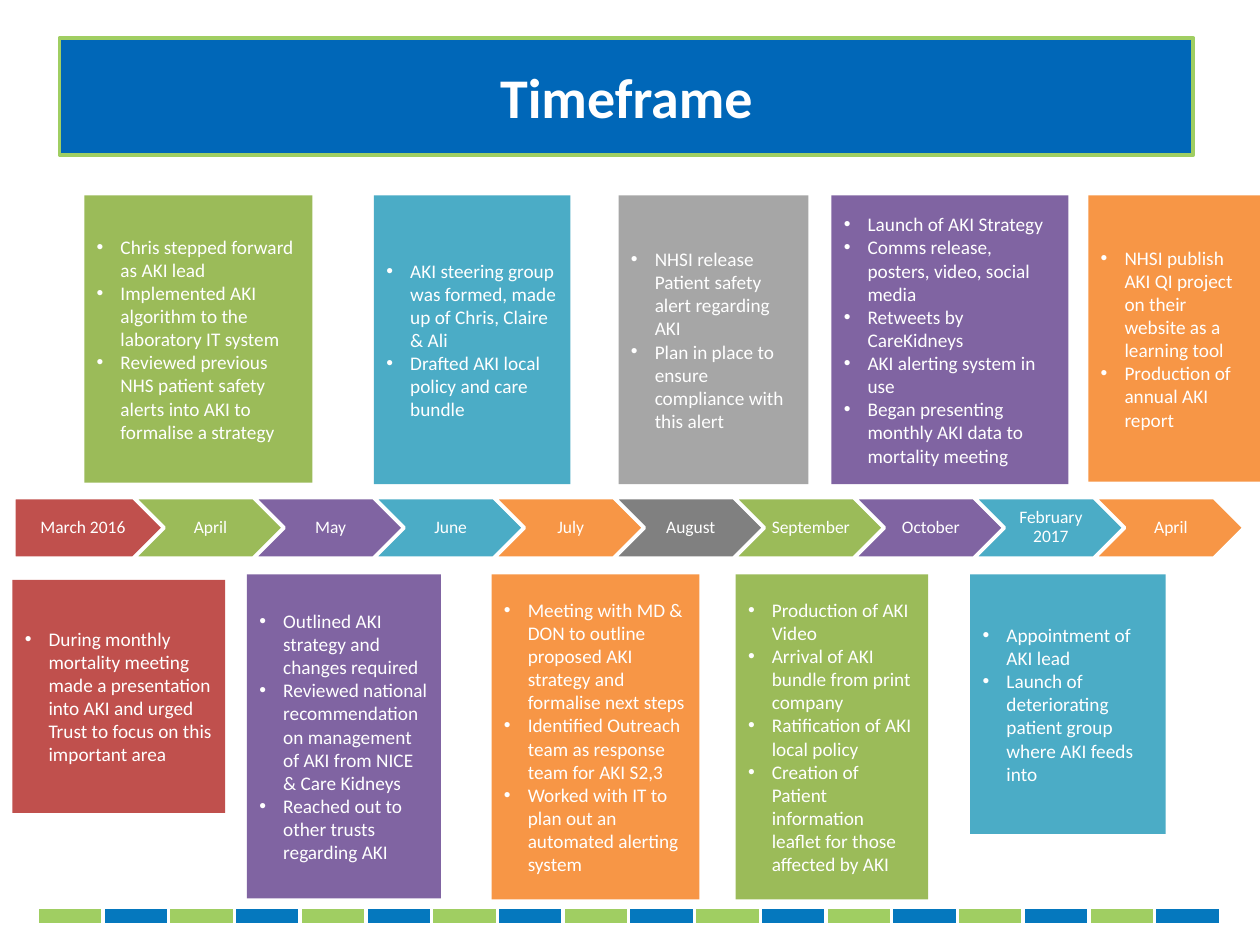
"""Build the Timeframe slide: monthly arrows with event cards above and below."""
from lxml import etree
from pptx import Presentation
from pptx import util as u
from pptx.dml.color import RGBColor
from pptx.enum import shapes, text
from pptx.oxml import ns

THEME = {
    "font": "Calibri", "title_size": 32, "month_size": 10, "card_size": 11,
    "white": "FFFFFF", "banner": "0067B8", "lime": "A0CE62", "stripe": "0578BE",
    "red": "C0504D", "green": "9BBB59", "purple": "8064A2", "teal": "4BACC6",
    "orange": "F79646", "grey": "808080", "silver": "A6A6A6",
}

TITLE = "Timeframe"
MONTHS = [
    ("March 2016", "red"), ("April", "green"), ("May", "purple"), ("June", "teal"),
    ("July", "orange"), ("August", "grey"), ("September", "green"),
    ("October", "purple"), ("February 2017", "teal"), ("April", "orange"),
]
EVENTS_ABOVE = [
    ("green", (1.7, 3.94, 4.6, 5.79), [
        "Chris stepped forward as AKI lead",
        "Implemented AKI algorithm to the laboratory IT system",
        "Reviewed previous NHS patient safety alerts into AKI to formalise a strategy"]),
    ("teal", (7.54, 3.94, 3.96, 5.82), [
        "AKI steering group was formed, made up of Chris, Claire & Ali",
        "Drafted AKI local policy and care bundle"]),
    ("silver", (12.47, 3.94, 3.83, 5.82), [
        "NHSI release Patient safety alert regarding AKI",
        "Plan in place to ensure compliance with this alert"]),
    ("purple", (16.76, 3.94, 4.78, 5.82), [
        "Launch of AKI Strategy",
        "Comms release, posters, video, social media",
        "Retweets by CareKidneys",
        "AKI alerting system in use",
        "Began presenting monthly AKI data to mortality meeting"]),
    ("orange", (21.94, 3.94, 3.46, 5.77), [
        "NHSI publish AKI QI project on their website as a learning tool",
        "Production of annual AKI report"]),
]
EVENTS_BELOW = [
    ("red", (0.25, 11.69, 4.29, 4.7), [
        "During monthly mortality meeting made a presentation into AKI "
        "and urged Trust to focus on this important area"]),
    ("purple", (4.98, 11.58, 3.91, 6.53), [
        "Outlined AKI strategy and changes required",
        "Reviewed national recommendation on management of AKI from NICE & Care Kidneys",
        "Reached out to other trusts regarding AKI"]),
    ("orange", (9.91, 11.58, 4.19, 6.55), [
        "Meeting with MD & DON to outline proposed AKI strategy and formalise next steps",
        "Identified Outreach team as response team for AKI S2,3",
        "Worked with IT to plan out an automated alerting system"]),
    ("green", (14.83, 11.58, 3.88, 6.55), [
        "Production of AKI Video",
        "Arrival of AKI bundle from print company",
        "Ratification of AKI local policy",
        "Creation of Patient information leaflet for those affected by AKI"]),
    ("teal", (19.56, 11.58, 3.94, 5.23), [
        "Appointment of AKI lead",
        "Launch of deteriorating patient group where AKI feeds into"]),
]

FRAME = {"word_wrap": True, "vertical_anchor": text.MSO_ANCHOR.MIDDLE}
MONTH_FRAME = {"margin_left": u.Cm(0.1), "margin_right": u.Cm(0.03),
               "margin_top": u.Cm(0.07), "margin_bottom": u.Cm(0.07)}
STRIPES = 18
ARROW_LEFT, ARROW_TOP, ARROW_WIDTH, ARROW_HEIGHT, ARROW_STEP = 0.28, 10.03, 3.02, 1.22, 2.42


def color(key):
    return RGBColor.from_string(THEME[key])


def apply(target, values):
    for key, value in values.items():
        setattr(target, key, value)


def add_block(slide, preset, place, tint, lines, size, outline=None, bold=False,
              frame_values=None, align=text.PP_ALIGN.CENTER, spacing=None):
    block = slide.shapes.add_shape(preset, *map(u.Cm, place))
    block.shadow.inherit = False
    block.fill.solid()
    block.fill.fore_color.rgb = color(tint)
    if outline:
        block.line.color.rgb = color(outline[0])
        block.line.width = u.Pt(outline[1])
    else:
        block.line.fill.background()
    frame = block.text_frame
    apply(frame, {**FRAME, **(frame_values or {})})
    for index, line in enumerate(lines):
        paragraph = frame.add_paragraph() if index else frame.paragraphs[0]
        apply(paragraph, {"alignment": align, "line_spacing": spacing})
        run = paragraph.add_run()
        run.text = line
        apply(run.font, {"name": THEME["font"], "size": u.Pt(size), "bold": bold})
        run.font.color.rgb = color("white")
    return block


def add_card(slide, tint, place, items):
    card = add_block(slide, shapes.MSO_SHAPE.RECTANGLE, place, tint, items,
                     THEME["card_size"], align=text.PP_ALIGN.LEFT)
    for paragraph in card.text_frame.paragraphs:
        props = paragraph._p.get_or_add_pPr()
        props.set("marL", str(u.Cm(0.48)))
        props.set("indent", str(-u.Cm(0.48)))
        etree.SubElement(props, ns.qn("a:buFont")).set("typeface", "Arial")
        etree.SubElement(props, ns.qn("a:buChar")).set("char", "•")


def add_stripes(slide):
    strip = slide.shapes.add_table(1, STRIPES, u.Cm(0.75), u.Cm(18.29),
                                   u.Cm(23.85), u.Cm(0.36)).table
    apply(strip, {"first_row": False, "horz_banding": False})
    for index, cell in enumerate(strip.rows[0].cells):
        apply(cell, dict.fromkeys(
            ("margin_left", "margin_right", "margin_top", "margin_bottom"), 0))
        cell.fill.solid()
        cell.fill.fore_color.rgb = color("stripe" if index % 2 else "lime")
        ending = etree.SubElement(cell.text_frame.paragraphs[0]._p, ns.qn("a:endParaRPr"))
        ending.set("sz", "500")
        props = cell._tc.get_or_add_tcPr()
        for order, side in enumerate("LRTB"):
            border = etree.Element(ns.qn(f"a:ln{side}"), w=str(u.Pt(2.25)))
            paint = etree.SubElement(border, ns.qn("a:solidFill"))
            etree.SubElement(paint, ns.qn("a:srgbClr")).set("val", THEME["white"])
            props.insert(order, border)


def main():
    deck = Presentation()
    apply(deck, {"slide_width": u.Cm(25.4), "slide_height": u.Cm(19.05)})
    slide = deck.slides.add_slide(deck.slide_layouts[6])
    add_stripes(slide)
    add_block(slide, shapes.MSO_SHAPE.RECTANGLE, (1.2, 0.77, 22.86, 2.35), "banner",
              [TITLE], THEME["title_size"], outline=("lime", 2.25), bold=True)
    for index, (month, tint) in enumerate(MONTHS):
        preset = shapes.MSO_SHAPE.CHEVRON if index else shapes.MSO_SHAPE.PENTAGON
        place = (ARROW_LEFT + index * ARROW_STEP, ARROW_TOP, ARROW_WIDTH, ARROW_HEIGHT)
        add_block(slide, preset, place, tint, [month], THEME["month_size"],
                  outline=("white", 2), frame_values=MONTH_FRAME, spacing=0.9)
    for tint, place, items in EVENTS_ABOVE + EVENTS_BELOW:
        add_card(slide, tint, place, items)
    deck.save("out.pptx")


if __name__ == "__main__":
    main()
